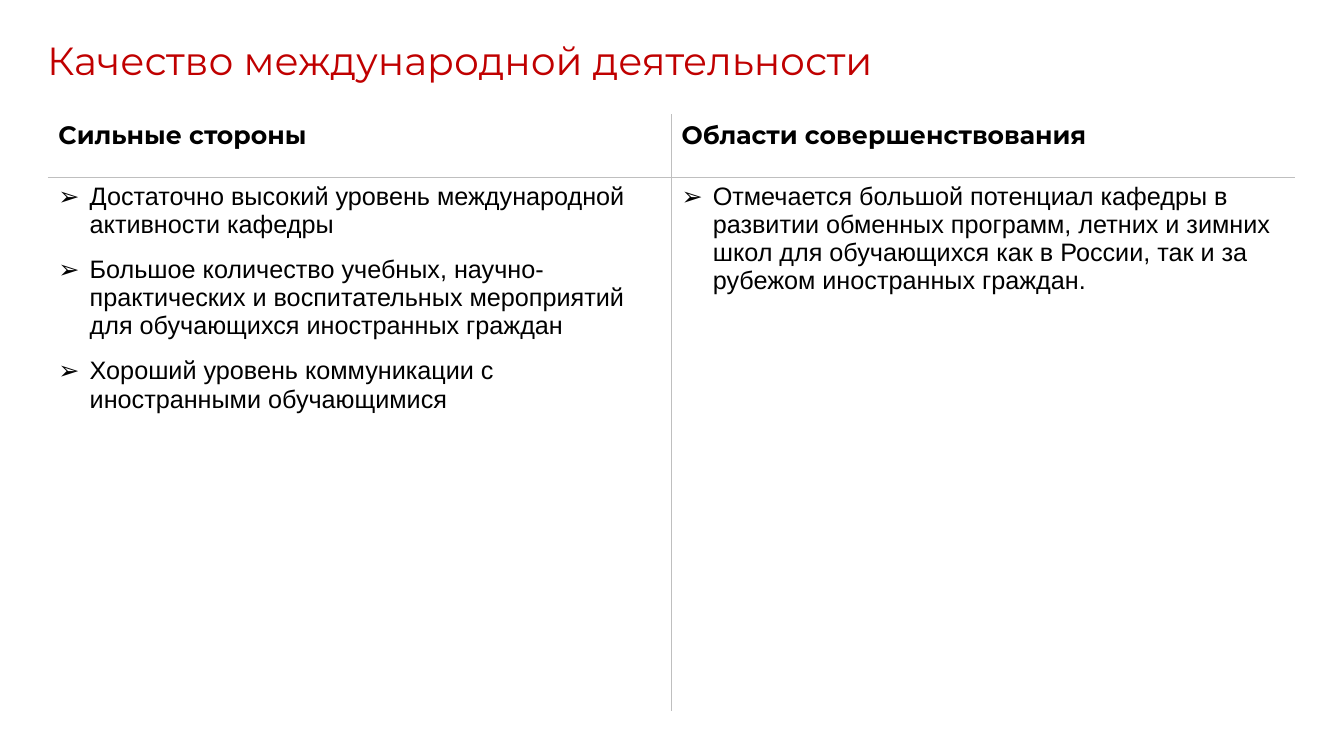
import dataclasses

import pptx
import pptx.dml.color
import pptx.oxml.ns
import pptx.util
from lxml import etree

Inches = pptx.util.Inches


@dataclasses.dataclass(frozen=True)
class Theme:
    """Colours, fonts and type sizes of the slide."""
    title: str = "C00000"
    text: str = "000000"
    rule: str = "BFBFBF"
    paper: str = "FFFFFF"
    head_font: str = "Montserrat"
    body_font: str = "Arial"
    title_size: int = 28
    body_size: int = 18
    space_before: int = 12
    rule_width: int = 1


THEME = Theme()

TITLE = "Качество международной деятельности"
COLUMNS = [
    ("Сильные стороны", [
        "Достаточно высокий уровень международной активности кафедры",
        "Большое количество учебных, научно-практических и воспитательных "
        "мероприятий для обучающихся иностранных граждан",
        "Хороший уровень коммуникации с иностранными обучающимися",
    ]),
    ("Области совершенствования", [
        "Отмечается большой потенциал кафедры в развитии обменных программ, "
        "летних и зимних школ для обучающихся как в России, так и за рубежом "
        "иностранных граждан.",
    ]),
]


def add_run(p, text, color, **formats):
    """Add a run of text with the given font formats."""
    r = p.add_run()
    r.text = text
    for name, value in formats.items():
        setattr(r.font, name, value)
    r.font.color.rgb = pptx.dml.color.RGBColor.from_string(color)


def add_bullet(p, indent):
    """Give a paragraph an arrow bullet with a hanging indent."""
    pPr = p._p.get_or_add_pPr()
    pPr.set("marL", str(indent))
    pPr.set("indent", str(-indent))
    for tag, key, value in (("a:buFont", "typeface", THEME.body_font), ("a:buChar", "char", "➢")):
        etree.SubElement(pPr, pptx.oxml.ns.qn(tag)).set(key, value)


def set_borders(cell, colors):
    """Draw the left, right, top and bottom borders of a cell."""
    qn = pptx.oxml.ns.qn
    tcPr = cell._tc.get_or_add_tcPr()
    for side, color in zip("LRTB", colors):
        ln = etree.SubElement(tcPr, qn(f"a:ln{side}"), w=str(pptx.util.Pt(THEME.rule_width)))
        fill = etree.SubElement(ln, qn("a:solidFill"))
        etree.SubElement(fill, qn("a:srgbClr"), val=color)


def add_title(s, left, top, width, height):
    """Place the slide title on one line."""
    tf = s.shapes.add_textbox(left, top, width, height).text_frame
    tf.word_wrap = False
    add_run(tf.paragraphs[0], TITLE, THEME.title, name=THEME.head_font,
            size=pptx.util.Pt(THEME.title_size))


def fill_body(tf, items):
    """Write the bulleted items of one column."""
    for i, item in enumerate(items):
        p = tf.add_paragraph() if i else tf.paragraphs[0]
        if len(items) > 1:
            p.space_before = pptx.util.Pt(THEME.space_before)
        add_bullet(p, Inches(0.31))
        add_run(p, item, THEME.text, name=THEME.body_font, bold=False,
                size=pptx.util.Pt(THEME.body_size))


def add_comparison(s, left, top, width, height):
    """Place the two-column table with rules only between its cells."""
    table = s.shapes.add_table(2, len(COLUMNS), left, top, width, height).table
    for name in ("first_row", "horz_banding"):
        setattr(table, name, False)
    table.rows[0].height = Inches(0.62)
    table.rows[1].height = height - Inches(0.62)
    last = len(COLUMNS) - 1
    for col, (heading, items) in enumerate(COLUMNS):
        add_run(table.cell(0, col).text_frame.paragraphs[0], heading, THEME.text,
                name=THEME.head_font, bold=True, size=pptx.util.Pt(THEME.body_size))
        fill_body(table.cell(1, col).text_frame, items)
        for row in range(2):
            inner = (col > 0, col < last, row > 0, row < 1)
            cell = table.cell(row, col)
            set_borders(cell, [THEME.rule if on else THEME.paper for on in inner])
            cell.fill.background()


def main():
    """Build the slide and save it."""
    prs = pptx.Presentation()
    prs.slide_width, prs.slide_height = Inches(13.33), Inches(7.5)
    s = prs.slides.add_slide(prs.slide_layouts[6])
    add_title(s, Inches(0.37), Inches(0.31), Inches(9.13), Inches(0.57))
    add_comparison(s, Inches(0.48), Inches(1.14), Inches(12.36), Inches(5.92))
    prs.save("out.pptx")


if __name__ == "__main__":
    main()
